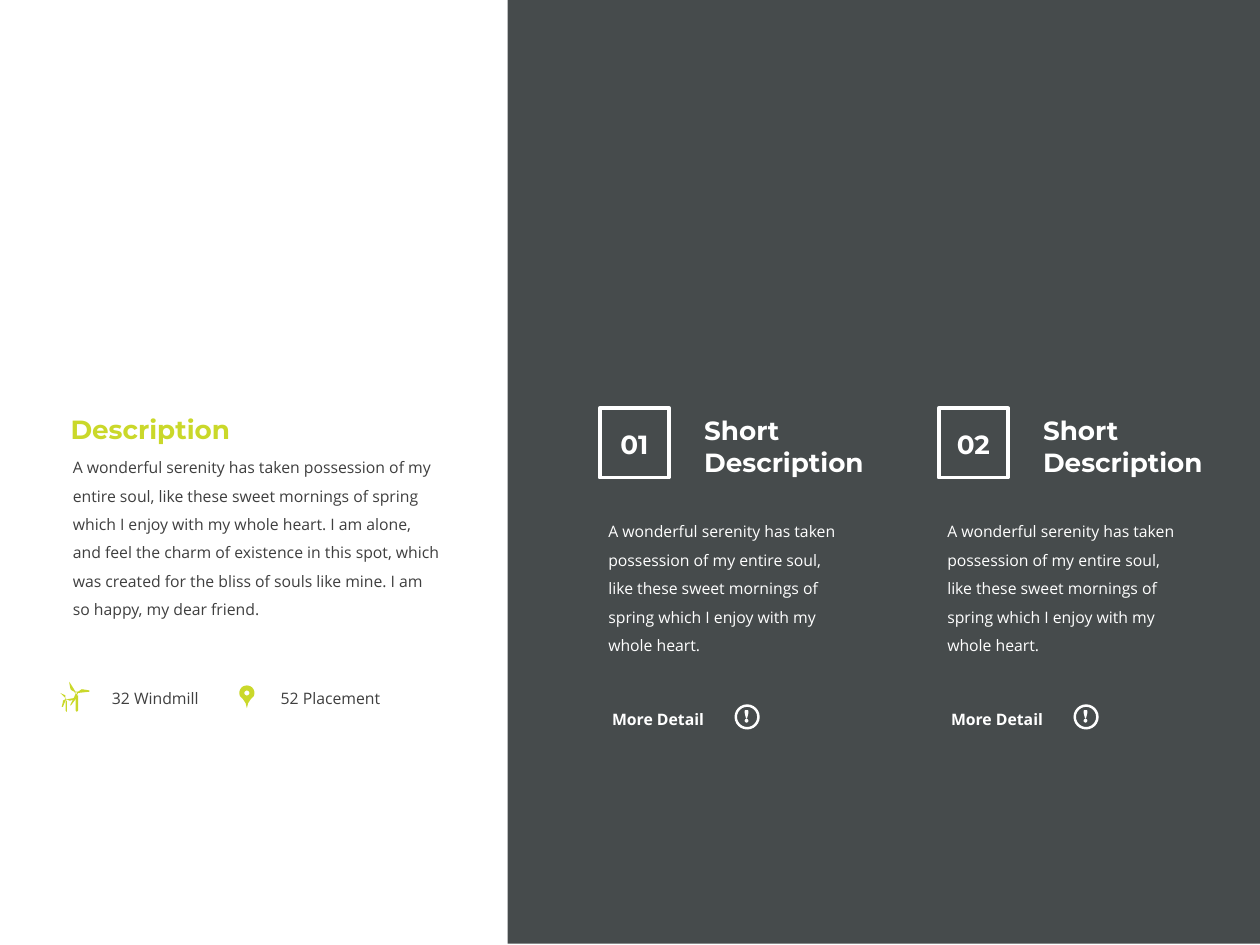
import math

from lxml import etree
from pptx import Presentation
from pptx import util as u
from pptx.dml.color import RGBColor
from pptx.enum import shapes, text
from pptx.oxml.ns import qn

DARK = RGBColor(0x18, 0x1E, 0x20)
GRAY = RGBColor(0x3F, 0x3F, 0x3F)
LIME = RGBColor(0xCA, 0xD8, 0x2A)
WHITE = RGBColor(0xFF, 0xFF, 0xFF)
HEAD, BODY = "Montserrat", "Open Sans"

INTRO = ("A wonderful serenity has taken possession of my entire soul, like these "
         "sweet mornings of spring which I enjoy with my whole heart.")
STORY = INTRO[:-1] + (". I am alone, and feel the charm of existence in this spot, "
                      "which was created for the bliss of souls like mine. "
                      "I am so happy, my dear friend.")


def write(shape, words, font=BODY, size=9, color=GRAY, bold=False,
          align=text.PP_ALIGN.LEFT, space=1.0):
    """Put formatted text into a shape."""
    frame = shape.text_frame
    frame.word_wrap = True
    frame.auto_size = text.MSO_AUTO_SIZE.SHAPE_TO_FIT_TEXT
    frame.vertical_anchor = text.MSO_ANCHOR.TOP
    para = frame.paragraphs[0]
    para.alignment, para.line_spacing = align, space
    run = para.add_run()
    run.text = words
    run.font.name, run.font.size, run.font.bold = font, u.Pt(size), bold
    run.font.color.rgb = color


def arc(x, y, r, start=0, end=360, steps=24):
    """Points on a circle, angles in degrees, clockwise from the right."""
    angles = [math.radians(start + (end - start) * i / steps) for i in range(steps + 1)]
    return [(x + r * math.cos(a), y + r * math.sin(a)) for a in angles]


class Deck:
    """Holds the style and the current slide."""

    def __init__(self):
        self.prs = Presentation()
        self.prs.slide_width, self.prs.slide_height = u.Inches(10), u.Inches(7.5)
        self.slide = self.prs.slides.add_slide(self.prs.slide_layouts[5])

    def paint(self, shape, fill=None, line=None, width=1):
        shape.shadow.inherit = False
        if fill is None:
            shape.fill.background()
        else:
            shape.fill.solid()
            shape.fill.fore_color.rgb = fill
        if line is None:
            shape.line.fill.background()
        else:
            shape.line.color.rgb, shape.line.width = line, u.Pt(width)
        return shape

    def title(self, words, box, **style):
        shape = self.slide.shapes.title
        shape.left, shape.top, shape.width, shape.height = map(u.Inches, box)
        write(shape, words, **style)

    def label(self, words, box, **style):
        write(self.slide.shapes.add_textbox(*map(u.Inches, box)), words, **style)

    def shape(self, kind, box, **style):
        new = self.slide.shapes.add_shape(kind, *map(u.Inches, box))
        return self.paint(new, **style)

    def outline(self, *loops, **style):
        """Draw closed loops of points as one shape; inner loops are holes."""
        loops = [[(u.Inches(x), u.Inches(y)) for x, y in loop] for loop in loops]
        pen = self.slide.shapes.build_freeform(*loops[0][0])
        pen.add_line_segments(loops[0][1:], close=True)
        for loop in loops[1:]:
            pen.move_to(*loop[0])
            pen.add_line_segments(loop[1:], close=True)
        return self.paint(pen.convert_to_shape(), **style)


def panel(deck):
    back = deck.shape(shapes.MSO_SHAPE.RECTANGLE, (4.03, 0, 5.97, 7.49), fill=DARK)
    tint = back.fill._xPr.find(qn("a:solidFill"))[0]
    etree.SubElement(tint, qn("a:alpha")).set("val", "80000")


def mills(deck):
    # Large rotor and mast
    deck.outline(
        [(.71, 5.48), (.65, 5.47), (.62, 5.49), (.6, 5.49), (.55, 5.41), (.55, 5.42),
         (.56, 5.47), (.57, 5.48), (.59, 5.49), (.6, 5.51), (.56, 5.59), (.56, 5.6),
         (.57, 5.59), (.6, 5.55), (.61, 5.54), (.61, 5.52), (.62, 5.5), (.71, 5.49)],
        arc(.605, 5.5, .007), fill=LIME)
    deck.outline([(.6, 5.52), (.62, 5.52), (.62, 5.64), (.61, 5.65), (.6, 5.64)],
                 fill=LIME)
    # Small rotor and mast
    deck.outline(
        [(.49, 5.61), (.5, 5.61), (.52, 5.56), (.53, 5.55), (.55, 5.56), (.56, 5.56),
         (.59, 5.55), (.59, 5.54), (.53, 5.55), (.52, 5.54), (.52, 5.52), (.48, 5.5),
         (.52, 5.54), (.52, 5.55), (.5, 5.56), (.5, 5.57)], fill=LIME)
    deck.outline([(.52, 5.56), (.53, 5.56), (.53, 5.65), (.52, 5.64)], fill=LIME)


def pin(deck):
    drop = arc(1.96, 5.5, .06, 155, 385)
    tip = [(1.99, 5.55), (1.97, 5.58), (1.96, 5.62), (1.95, 5.58), (1.93, 5.55)]
    deck.outline(drop + tip, arc(1.96, 5.5, .02), fill=LIME)


def card(deck, x, num):
    """One numbered column whose box starts at x."""
    head = dict(font=HEAD, size=15, color=WHITE, bold=True)
    deck.shape(shapes.MSO_SHAPE.RECTANGLE, (x, 3.24, .55, .55), line=WHITE, width=2.25)
    deck.label(num, (x, 3.35, .55, .35), align=text.PP_ALIGN.CENTER, **head)
    deck.label("Short Description", (x + .73, 3.24, 1.65, .61), **head)
    deck.label(INTRO, (x - .03, 4.02, 2.1, 1.21), color=WHITE, space=1.5)
    deck.label("More Detail", (x, 5.58, 1.2, .25), color=WHITE, bold=True)
    # Ring with exclamation mark
    ring = deck.shape(shapes.MSO_SHAPE.DONUT, (x + 1.07, 5.59, .2, .2), fill=WHITE)
    ring.adjustments[0] = .1
    mid = x + 1.165
    stem = [(mid - .01, 5.64), (mid + .01, 5.64), (mid + .01, 5.66),
            (mid, 5.7), (mid - .01, 5.66)]
    deck.outline(stem, arc(mid, 5.72, .01), fill=WHITE, line=WHITE, width=.63)


def main():
    deck = Deck()
    panel(deck)

    # Left column
    deck.title("Description", (.46, 3.23, 1.65, .35),
               font=HEAD, size=15, color=LIME, bold=True)
    deck.label(STORY, (.48, 3.51, 3.11, 1.44), space=1.5)
    mills(deck)
    pin(deck)
    deck.label("32 Windmill", (.79, 5.42, .92, .25))
    deck.label("52 Placement", (2.13, 5.42, 1.13, .25))

    # Right columns
    for i, num in enumerate(("01", "02")):
        card(deck, 4.76 + 2.69 * i, num)

    deck.prs.save("out.pptx")


if __name__ == "__main__":
    main()
